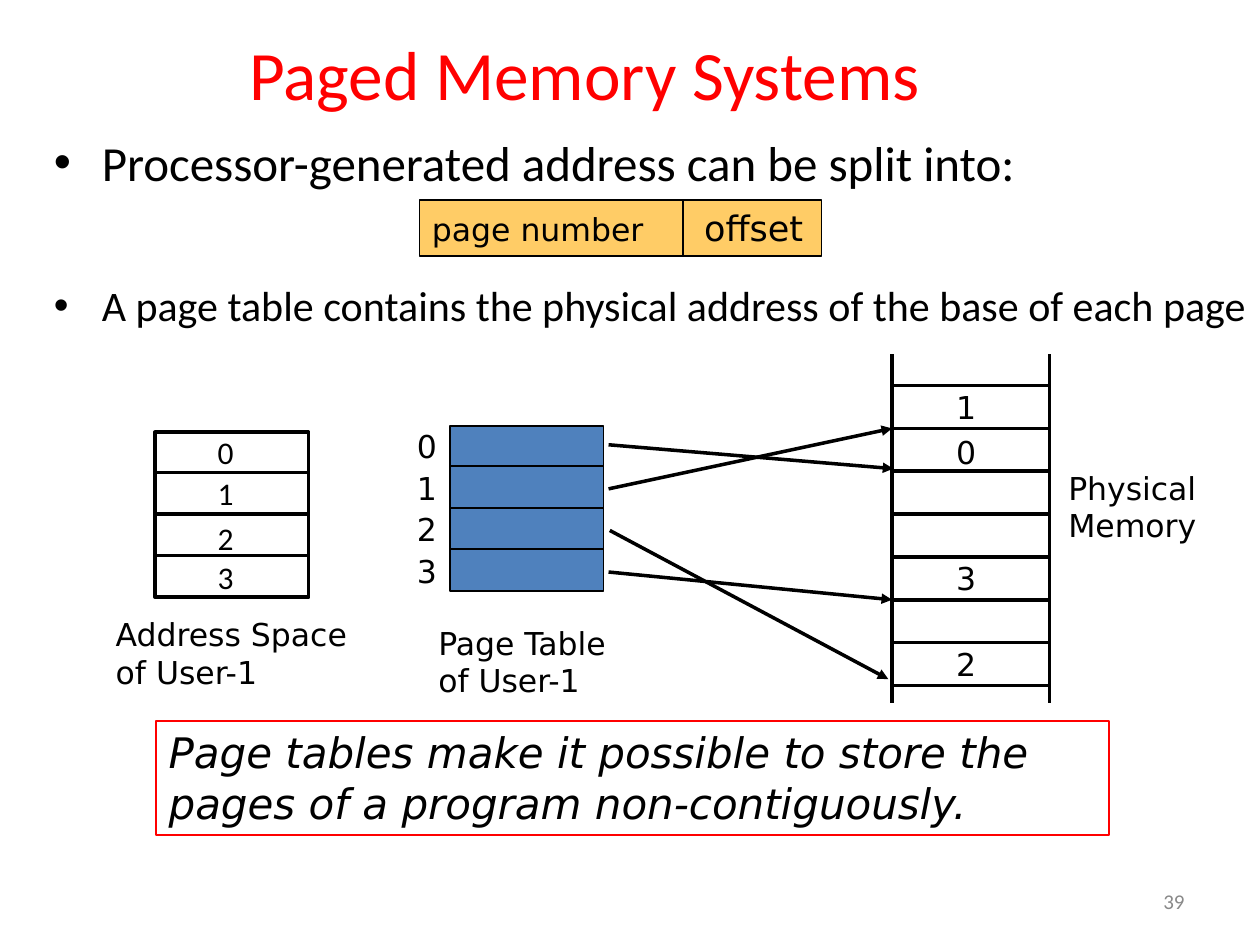
from lxml import etree
from pptx import Presentation
from pptx.dml.color import RGBColor
from pptx.enum.shapes import MSO_CONNECTOR, MSO_SHAPE
from pptx.enum.text import MSO_ANCHOR, PP_ALIGN
from pptx.oxml.ns import qn
from pptx.util import Inches, Pt

RECT = MSO_SHAPE.RECTANGLE
STRAIGHT = MSO_CONNECTOR.STRAIGHT
TOP, MIDDLE = MSO_ANCHOR.TOP, MSO_ANCHOR.MIDDLE
LEFT, CENTER, RIGHT = PP_ALIGN.LEFT, PP_ALIGN.CENTER, PP_ALIGN.RIGHT
SANS, BODY = "DejaVu Sans", "Calibri"
COLORS = {"black": "000000", "red": "FF0000", "gray": "898989",
          "blue": "4F81BD", "amber": "FFCC66"}

prs = Presentation()
prs.slide_width, prs.slide_height = Inches(10), Inches(7.5)
s = prs.slides.add_slide(prs.slide_layouts[6])


def rgb(name):
    return RGBColor.from_string(COLORS[name])


def add_text(text, x, y, w, h, size=18, font=SANS, color="black", align=LEFT,
             anchor=TOP, wrap=True, italic=False, bullet=False,
             fill=None, line=None, width=1):
    box = Inches(x), Inches(y), Inches(w), Inches(h)
    if line:
        sp = s.shapes.add_shape(RECT, *box)
        sp.shadow.inherit = False
        sp.line.color.rgb = rgb(line)
        sp.line.width = Pt(width)
        if fill:
            sp.fill.solid()
            sp.fill.fore_color.rgb = rgb(fill)
        else:
            sp.fill.background()
    else:
        sp = s.shapes.add_textbox(*box)
    tf = sp.text_frame
    tf.word_wrap = wrap
    tf.vertical_anchor = anchor
    for i, part in enumerate(text.split("\n") if text else []):
        p = tf.add_paragraph() if i else tf.paragraphs[0]
        p.alignment = align
        if bullet:
            pPr = p._p.get_or_add_pPr()
            pPr.set("marL", str(Inches(0.38)))
            pPr.set("indent", str(Inches(-0.38)))
            etree.SubElement(pPr, qn("a:buFont")).set("typeface", "Arial")
            etree.SubElement(pPr, qn("a:buChar")).set("char", "•")
        r = p.add_run()
        r.text = part
        r.font.size = Pt(size)
        r.font.name = font
        r.font.italic = italic
        r.font.color.rgb = rgb(color)
    return tf


def add_line(x1, y1, x2, y2, width=2, arrow=False):
    c = s.shapes.add_connector(STRAIGHT, Inches(x1), Inches(y1), Inches(x2), Inches(y2))
    c.line.color.rgb = rgb("black")
    c.line.width = Pt(width)
    if arrow:
        etree.SubElement(c.line._get_or_add_ln(), qn("a:tailEnd")).set("type", "triangle")
    etree.SubElement(c._element.spPr, qn("a:effectLst"))


add_text("39", 7.17, 6.95, 2.33, 0.4, size=12, font=BODY, color="gray",
         align=RIGHT, anchor=MIDDLE)
add_text("Paged Memory Systems", 0.65, 0.17, 7.98, 0.81, size=39.6, font=BODY,
         color="red", align=CENTER, anchor=MIDDLE)
add_text("Processor-generated address can be split into:", 0.33, 1, 8.33, 0.58,
         size=28, font=BODY, bullet=True)
add_text("A page table contains the physical address of the base of each page",
         0.33, 2.17, 9.67, 0.58, size=24, font=BODY, bullet=True)

tf = add_text("page number", 3.33, 1.59, 3.19, 0.44, fill="amber", line="black")
p = tf.paragraphs[0]
tabs = etree.SubElement(p._p.get_or_add_pPr(), qn("a:tabLst"))
etree.SubElement(tabs, qn("a:tab"), pos=str(Inches(2.16)), algn="l")
r = p.add_run()
r.text = "\toffset"
r.font.size = Pt(20)
r.font.name = SANS
r.font.color.rgb = rgb("black")
add_line(5.42, 1.59, 5.42, 2.03, width=0.75)

for x, y, fill, width in [(1.23, 3.43, None, 2), (3.57, 3.38, "blue", 1)]:
    add_text("", x, y, 1.22, 1.31, fill=fill, line="black", width=width)
    for i in range(3):
        row_y = y + 0.32 + 0.33 * i
        add_line(x, row_y, x + 1.22, row_y, width=width)

for i, y in enumerate([3.39, 3.71, 4.07, 4.38]):
    add_text(str(i), 1.63, y, 0.34, 0.4, font=BODY, wrap=False)
    add_text(str(i), 3.21, 3.34 + 0.33 * i, 0.36, 0.4, wrap=False)

add_text("Address Space\nof User-1", 0.82, 4.83, 2.06, 0.7, wrap=False)
add_text("Page Table\nof User-1", 3.38, 4.9, 1.55, 0.7, wrap=False)

for x in (7.08, 8.33):
    add_line(x, 2.81, x, 5.58)
for i in range(8):
    y = 3.06 + 0.34 * i
    add_line(7.08, y, 8.33, y)
for page, y in [("1", 3.03), ("0", 3.39), ("3", 4.39), ("2", 5.07)]:
    add_text(page, 7.49, y, 0.36, 0.4, wrap=False)
add_text("Physical Memory", 8.38, 3.67, 1.62, 0.7)

for x1, y1, x2, y2 in [(4.83, 3.53, 7.09, 3.72), (4.83, 3.88, 7.08, 3.4),
                       (4.84, 4.21, 7.05, 5.39), (4.83, 4.54, 7.08, 4.76)]:
    add_line(x1, y1, x2, y2, arrow=True)

add_text("Page tables make it possible to store the pages of a program non-contiguously.",
         1.24, 5.72, 7.56, 0.91, size=24, italic=True, line="red")

prs.save("out.pptx")
